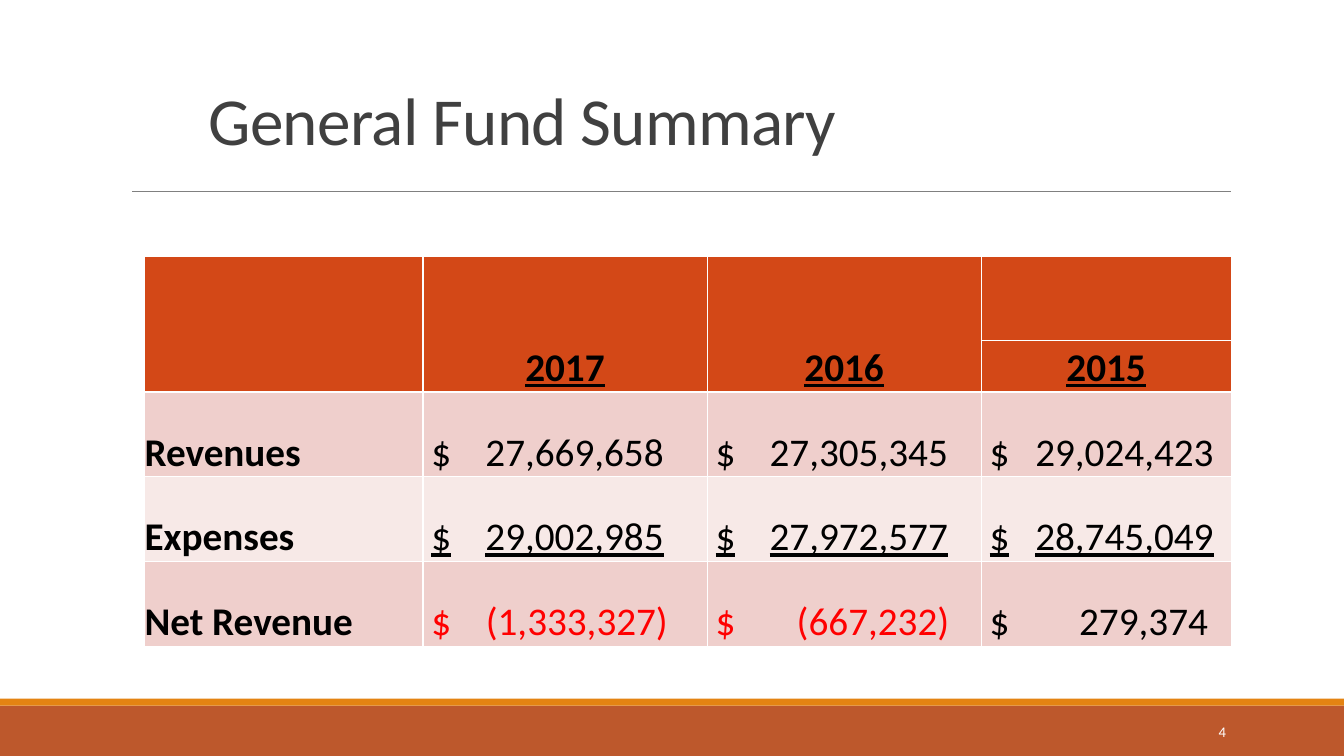
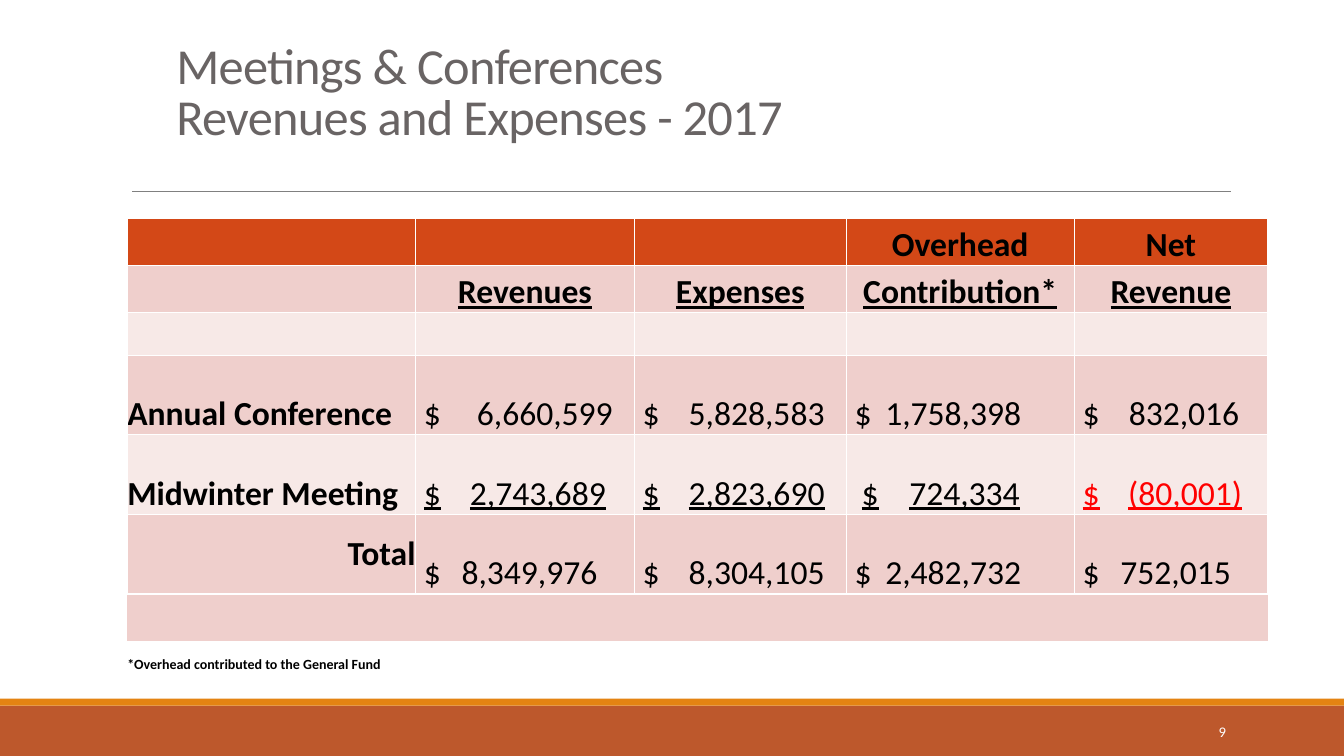
import dataclasses

import lxml.etree
import pptx
import pptx.dml.color
import pptx.enum.shapes
import pptx.enum.text
import pptx.oxml.ns
import pptx.util

Pt = pptx.util.Pt
qn = pptx.oxml.ns.qn
ALIGN = pptx.enum.text.PP_ALIGN
ANCHOR = pptx.enum.text.MSO_ANCHOR


@dataclasses.dataclass(frozen=True)
class Theme:
    font: str = "Calibri"
    white: str = "FFFFFF"
    black: str = "000000"
    negative: str = "FF0000"
    title: str = "404040"
    soft_title: str = "696464"
    rule: str = "808080"
    band: str = "BD582C"
    stripe: str = "E48312"
    header: str = "D34817"
    dark_row: str = "EFCFCC"
    light_row: str = "F7E9E7"
    title_size: float = 48
    long_title_size: float = 36
    summary_size: float = 28
    detail_size: float = 24
    note_size: float = 10
    number_size: float = 10.5


T = Theme()


@dataclasses.dataclass
class Cell:
    """One table cell; sides names the edges (L, R, T, B) that get a line."""
    text: str = ""
    bold: bool = True
    underline: bool = False
    color: str = T.black
    align: ALIGN = ALIGN.LEFT
    anchor: ANCHOR = ANCHOR.BOTTOM
    size: float = 0
    stops: tuple = ()
    sides: str = "LRTB"


@dataclasses.dataclass
class Row:
    height: float
    fill: str
    cells: list


def heading(text, underline=False, **kw):
    return Cell(text, underline=underline, align=ALIGN.CENTER, **kw)


def amount(value, right, lead=6, tail=0, **kw):
    """Dollar sign at lead, figure ending at right, underline running on by tail."""
    stops = [(lead, "l"), (right, "r")]
    text = f"\t$\t{value}"
    if tail:
        stops.append((right + tail, "l"))
        text += "\t"
    return Cell(text, bold=False, stops=tuple(stops), **kw)


def rgb(color):
    return pptx.dml.color.RGBColor.from_string(color)


def add_text(tf, text, *, size, color, bold=False, underline=False,
             align=ALIGN.LEFT, line_spacing=None, tracking=None, stops=()):
    p = tf.paragraphs[0]
    p.alignment = align
    if line_spacing:
        p.line_spacing = line_spacing
    if stops:
        tabs = lxml.etree.SubElement(p._p.get_or_add_pPr(), qn("a:tabLst"))
        for pos, kind in stops:
            lxml.etree.SubElement(tabs, qn("a:tab"), pos=str(int(Pt(pos))), algn=kind)
    for i, line in enumerate(text.split("\n")):
        if i:
            p.add_line_break()
        r = p.add_run()
        r.text = line
        r.font.name, r.font.size = T.font, Pt(size)
        r.font.bold, r.font.underline = bold, underline
        r.font.color.rgb = rgb(color)
        if tracking:
            r._r.get_or_add_rPr().set("spc", str(round(tracking * 100)))


def add_band(s, top, height, color):
    sp = s.shapes.add_shape(pptx.enum.shapes.MSO_SHAPE.RECTANGLE,
                            0, Pt(top), Pt(960), Pt(height))
    sp.shadow.inherit = False
    sp.fill.solid()
    sp.fill.fore_color.rgb = rgb(color)
    sp.line.fill.background()
    return sp


def add_rule(s, left, right, y):
    ln = s.shapes.add_connector(pptx.enum.shapes.MSO_CONNECTOR.STRAIGHT,
                                Pt(left), Pt(y), Pt(right), Pt(y))
    ln.line.color.rgb = rgb(T.rule)
    ln.line.width = Pt(0.5)
    lxml.etree.SubElement(ln.element.spPr, qn("a:effectLst"))
    return ln


def decorate_layout(layout, s):
    """Draw the shared bands and rule on s, then move them to its layout."""
    shared = [add_band(s, 504, 36, T.band), add_band(s, 499, 5, T.stripe),
              add_rule(s, 94.5, 879, 136.6)]
    for i, sp in enumerate(shared):
        layout.shapes.element.insert(2 + i, sp.element)


def set_title(s, text, left, top, width, height, size, color):
    sp = s.shapes.title
    sp.left, sp.top, sp.width, sp.height = map(Pt, (left, top, width, height))
    tf = sp.text_frame
    tf.word_wrap = True
    tf.auto_size = pptx.enum.text.MSO_AUTO_SIZE.NONE
    tf.vertical_anchor = ANCHOR.BOTTOM
    add_text(tf, text, size=size, color=color, line_spacing=0.85, tracking=-0.5)


def add_slide_number(s, number):
    tf = s.shapes.add_textbox(Pt(779.8), Pt(508.3), Pt(103), Pt(28.8)).text_frame
    tf.word_wrap = True
    tf.vertical_anchor = ANCHOR.MIDDLE
    add_text(tf, str(number), size=T.number_size, color=T.white, align=ALIGN.RIGHT)


def set_borders(cell, sides, heavy):
    """Line the named sides in white; those in heavy are thicker."""
    tc_pr = cell._tc.get_or_add_tcPr()
    for i, side in enumerate("LRTB"):
        width = 1.5 if side in heavy else 1
        ln = lxml.etree.Element(qn(f"a:ln{side}"), w=str(int(Pt(width))))
        if side in sides:
            fill = lxml.etree.SubElement(ln, qn("a:solidFill"))
            lxml.etree.SubElement(fill, qn("a:srgbClr"), val=T.white)
        else:
            lxml.etree.SubElement(ln, qn("a:noFill"))
        tc_pr.insert(i, ln)


def fill_cell(cell, c, fill, size, heavy):
    cell.margin_left = cell.margin_right = cell.margin_top = cell.margin_bottom = 0
    cell.vertical_anchor = c.anchor
    if fill:
        cell.fill.solid()
        cell.fill.fore_color.rgb = rgb(fill)
    else:
        cell.fill.background()
    if c.text:
        add_text(cell.text_frame, c.text, size=c.size or size, color=c.color,
                 bold=c.bold, underline=c.underline, align=c.align, stops=c.stops)
    set_borders(cell, c.sides, heavy)


def add_table(s, left, top, widths, rows, size, header_rows):
    tbl = s.shapes.add_table(len(rows), len(widths), Pt(left), Pt(top), Pt(sum(widths)),
                             Pt(sum(row.height for row in rows))).table
    for col, width in zip(tbl.columns, widths):
        col.width = Pt(width)
    for i, row in enumerate(rows):
        tbl.rows[i].height = Pt(row.height)
        heavy = {header_rows - 1: "B", header_rows: "T"}.get(i, "")
        for j, c in enumerate(row.cells):
            fill_cell(tbl.cell(i, j), c, row.fill, size, heavy)
    return tbl


def build_fund_summary(s):
    set_title(s, "General Fund Summary", 141.8, 49, 764, 68.4, T.title_size, T.title)
    rows = [
        Row(60.5, T.header, [Cell(sides="LRT")] * 3 + [Cell()]),
        Row(36.7, T.header, [Cell(sides="LRB"),
                             heading("2017", True, sides="LRB"),
                             heading("2016", True, sides="LRB"),
                             heading("2015", True)]),
        Row(60.5, T.dark_row, [Cell("Revenues"),
                               amount("27,669,658", 172),
                               amount("27,305,345", 172),
                               amount("29,024,423", 166)]),
        Row(60.5, T.light_row, [Cell("Expenses"),
                                amount("29,002,985", 172, tail=6, underline=True),
                                amount("27,972,577", 172, tail=6, underline=True),
                                amount("28,745,049", 166, tail=6, underline=True)]),
        Row(60.5, T.dark_row, [Cell("Net Revenue"),
                               amount("(1,333,327)", 175, color=T.negative),
                               amount("(667,232)", 173, color=T.negative),
                               amount("279,374", 162)]),
    ]
    add_table(s, 103.3, 182.9, [198.8, 203, 195.8, 178.5], rows, T.summary_size, 2)
    add_slide_number(s, 4)


def build_conferences(s):
    set_title(s, "Meetings & Conferences\nRevenues and Expenses - 2017",
              118.8, 49, 787, 59, T.long_title_size, T.soft_title)
    rows = [
        Row(33.8, T.header, [Cell()] * 3 + [heading("Overhead"), heading("Net")]),
        Row(33.8, T.dark_row, [Cell()] + [heading(t, True) for t in (
            "Revenues", "Expenses", "Contribution*", "Revenue")]),
        Row(30.2, T.light_row, [Cell()] * 5),
        Row(56.9, T.dark_row, [Cell("Annual Conference"),
                               amount("6,660,599", 141),
                               amount("5,828,583", 136),
                               amount("1,758,398", 125),
                               amount("832,016", 118)]),
        Row(56.9, T.light_row, [Cell("Midwinter Meeting"),
                                amount("2,743,689", 136, tail=5, underline=True),
                                amount("2,823,690", 136, tail=5, underline=True),
                                amount("724,334", 124, lead=11, underline=True),
                                amount("(80,001)", 120, underline=True,
                                       color=T.negative)]),
        Row(56.9, T.dark_row, [Cell("Total", align=ALIGN.RIGHT, anchor=ANCHOR.MIDDLE),
                               amount("8,349,976", 130),
                               amount("8,304,105", 136),
                               amount("2,482,732", 125),
                               amount("752,015", 112)]),
        Row(33.8, T.dark_row, [Cell(sides="T")] * 5),
        Row(33.8, "", [Cell("*Overhead contributed to the General Fund", sides="",
                            anchor=ANCHOR.MIDDLE, size=T.note_size)]
            + [Cell(sides="")] * 4),
    ]
    tbl = add_table(s, 90.9, 155.9, [205.9, 156.3, 151.4, 162.8, 138.2], rows,
                    T.detail_size, 1)
    tbl.cell(7, 0).merge(tbl.cell(7, 2))
    add_slide_number(s, 9)


def main():
    prs = pptx.Presentation()
    prs.slide_width, prs.slide_height = Pt(960), Pt(540)
    layout = prs.slide_layouts[5]
    summary, conferences = (prs.slides.add_slide(layout) for _ in range(2))
    decorate_layout(layout, summary)
    build_fund_summary(summary)
    build_conferences(conferences)
    prs.save("out.pptx")


if __name__ == "__main__":
    main()
